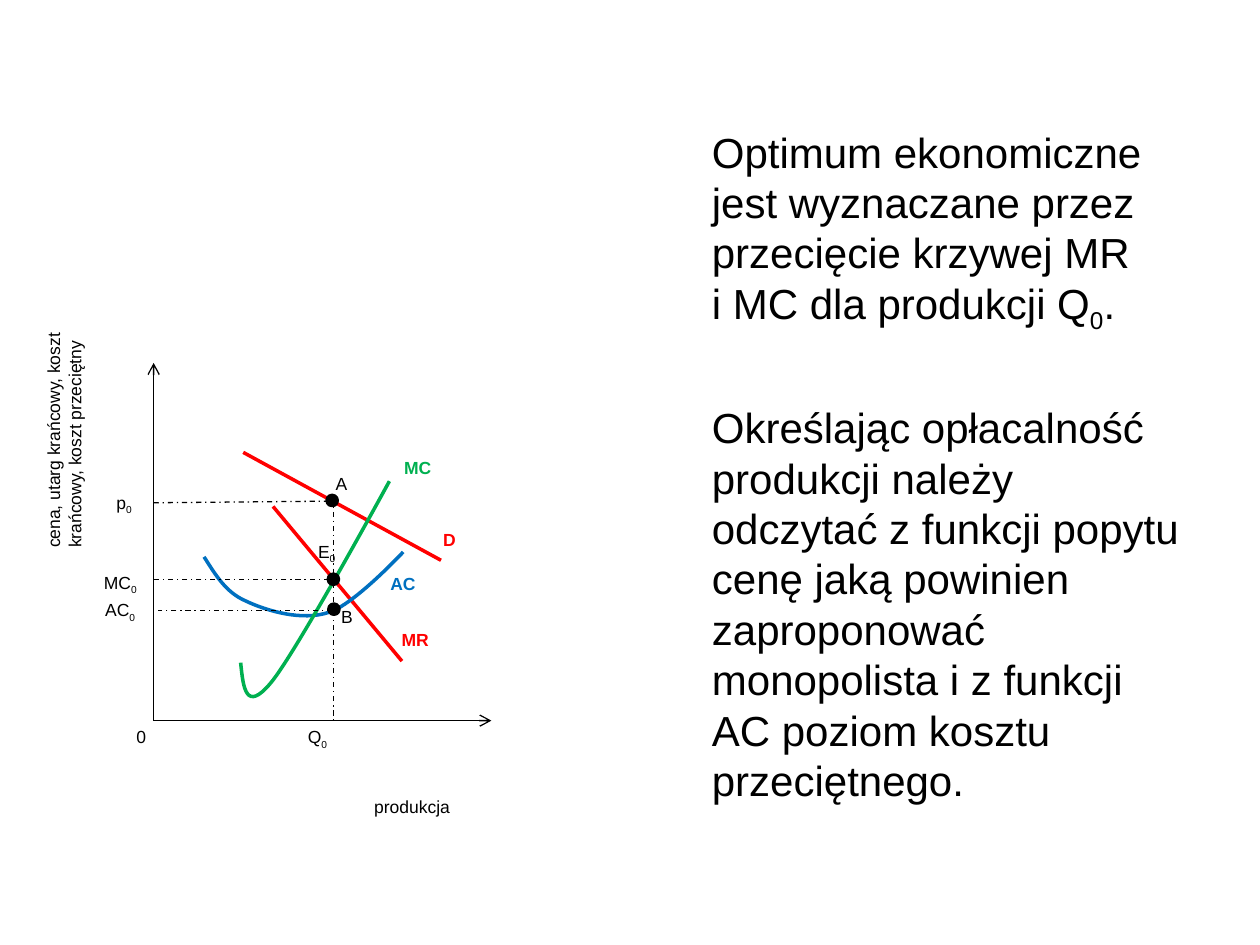
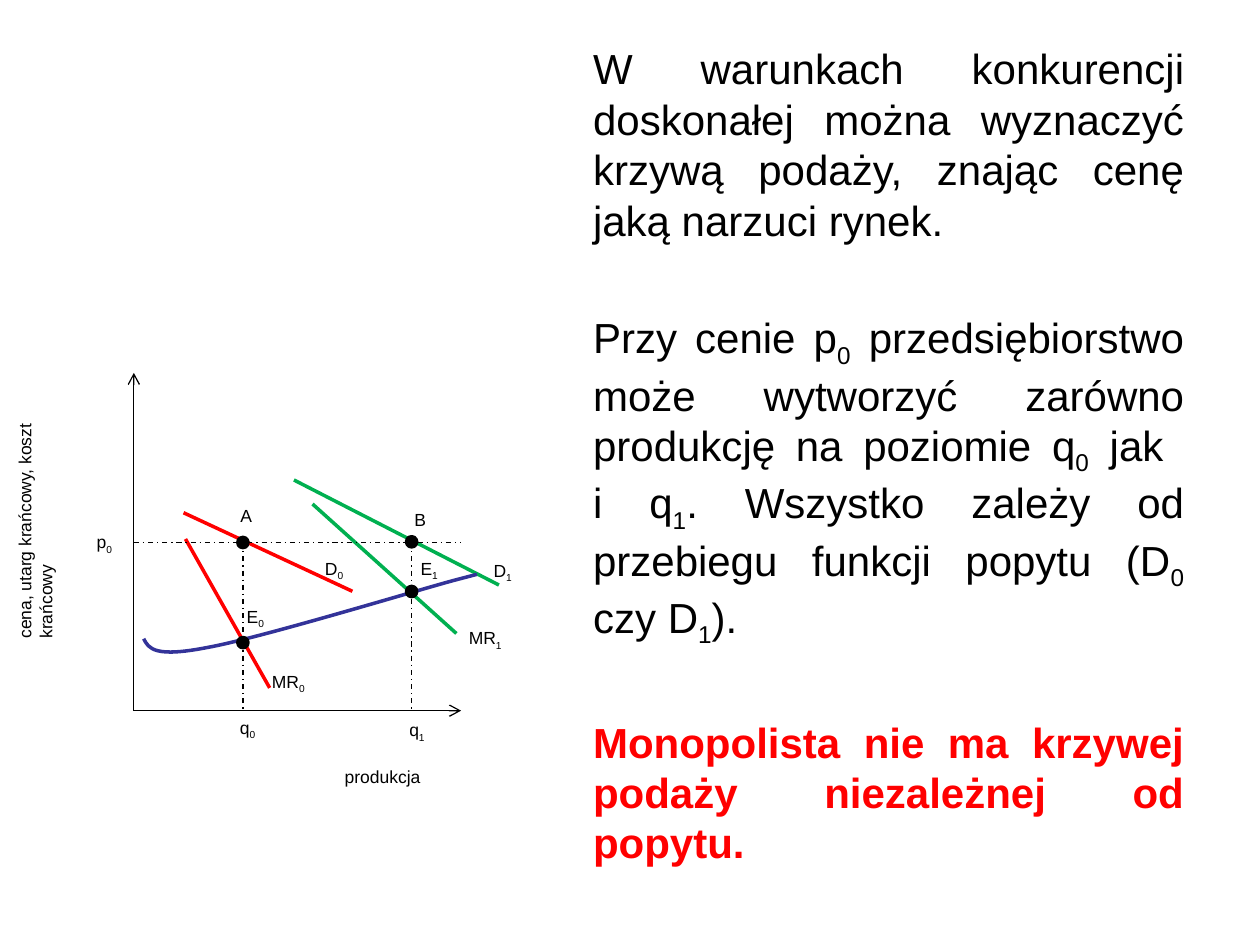
from dataclasses import dataclass

from lxml.etree import SubElement
from pptx import Presentation
from pptx.dml.color import RGBColor as Rgb
from pptx.enum.dml import MSO_LINE as Dash
from pptx.enum.shapes import MSO_CONNECTOR as Link, MSO_SHAPE as Form
from pptx.enum.text import MSO_ANCHOR as Anchor, MSO_AUTO_SIZE as Fit, PP_ALIGN as Align
from pptx.oxml.ns import qn
from pptx.util import Pt


@dataclass(frozen=True)
class Theme:
    font: str = "Arial"
    black: str = "000000"
    red: str = "FF0000"
    green: str = "00B050"
    blue: str = "0070C0"
    navy: str = "333399"
    body: float = 24
    label: float = 10
    thin: float = 0.75
    thick: float = 2
    dot: float = 5.8
    high: float = 19.4
    gap: float = 38.4


THEME = Theme()


def write(para, text, size, color=THEME.black, bold=False):
    def add(part, sub=False):
        run = para.add_run()
        run.text = part
        font = run.font
        font.name, font.size, font.bold = THEME.font, Pt(size), bold
        font.color.rgb = Rgb.from_string(color)
        if sub:
            font._element.set("baseline", "-25000")

    for row, line in enumerate(text.split("\n")):
        if row:
            para.add_line_break()
        first, *rest = line.split("_")
        add(first)
        for part in rest:
            add(part[0], sub=True)
            if part[1:]:
                add(part[1:])
    for mark in para._p.findall(qn("a:br")):
        SubElement(mark, qn("a:rPr"), sz=str(size * 100))


def add_page(deck, box, texts, align):
    slide = deck.slides.add_slide(deck.slide_layouts[1])
    title = slide.shapes.title._element
    title.getparent().remove(title)
    body = slide.placeholders[1]
    body.left, body.top, body.width, body.height = map(Pt, box)
    frame = body.text_frame
    frame.auto_size, frame.word_wrap = Fit.NONE, True
    frame.vertical_anchor = Anchor.TOP
    for num, (text, color, bold) in enumerate(texts):
        para = frame.add_paragraph() if num else frame.paragraphs[0]
        props = para._p.get_or_add_pPr()
        props.set("marL", "0")
        props.set("indent", "0")
        SubElement(props, qn("a:buNone"))
        para.alignment = align
        para.space_before = Pt(THEME.gap if num else 0)
        write(para, text, THEME.body, color, bold)
    return slide


def add_label(slide, text, left, top, width, color=THEME.black, bold=False,
              high=THEME.high, turn=0):
    box = slide.shapes.add_textbox(*map(Pt, (left, top, width, high)))
    box.rotation = turn
    frame = box.text_frame
    frame.word_wrap = True
    write(frame.paragraphs[0], text, THEME.label, color, bold)


def add_line(slide, start, end, color=THEME.black, width=THEME.thin,
             dash=False, arrow=False):
    line = slide.shapes.add_connector(Link.STRAIGHT, *map(Pt, (*start, *end)))
    line.line.color.rgb = Rgb.from_string(color)
    line.line.width = Pt(width)
    if dash:
        line.line.dash_style = Dash.DASH_DOT
    if arrow:
        SubElement(line.line._get_or_add_ln(), qn("a:tailEnd"), type="arrow")
    SubElement(line._element.spPr, qn("a:effectLst"))


def add_curve(slide, points, color):
    start, *rest = [(Pt(x), Pt(y)) for x, y in points]
    pen = slide.shapes.build_freeform(*start)
    pen.add_line_segments(rest, close=False)
    curve = pen.convert_to_shape()
    legs = list(curve._element.iter(qn("a:lnTo")))
    for num in range(0, len(legs), 3):
        trio = legs[num:num + 3]
        route = trio[0].getparent()
        bend = SubElement(route, qn("a:cubicBezTo"))
        for leg in trio:
            bend.append(leg[0])
            route.remove(leg)
    curve.shadow.inherit = False
    curve.fill.background()
    curve.line.color.rgb = Rgb.from_string(color)
    curve.line.width = Pt(THEME.thick)


def add_dot(slide, x, y):
    size = THEME.dot
    dot = slide.shapes.add_shape(
        Form.OVAL, *map(Pt, (x - size / 2, y - size / 2, size, size)))
    dot.shadow.inherit = False
    dot.fill.solid()
    dot.fill.fore_color.rgb = Rgb.from_string(THEME.black)
    dot.line.color.rgb = Rgb.from_string(THEME.black)
    dot.line.width = Pt(THEME.thick)


def add_graph(slide, zero, top, right, lines, curves, guides, dots, labels):
    x, y = zero
    add_line(slide, zero, (x, top), arrow=True)
    add_line(slide, zero, (right, y), arrow=True)
    for start, end, color in lines:
        add_line(slide, start, end, color, THEME.thick)
    for points, color in curves:
        add_curve(slide, points, color)
    for start, end in guides:
        add_line(slide, start, end, dash=True)
    for spot in dots:
        add_dot(slide, *spot)
    for label in labels:
        add_label(slide, *label)


def add_best(deck):
    t = THEME
    slide = add_page(deck, (399.6, 68.4, 284.4, 402.5), [
        ("Optimum ekonomiczne jest wyznaczane przez przecięcie krzywej MR \n"
         "i MC dla produkcji Q_0.", t.black, False),
        ("Określając opłacalność produkcji należy odczytać z funkcji popytu "
         "cenę jaką powinien zaproponować monopolista i z funkcji AC poziom "
         "kosztu przeciętnego.", t.black, False),
    ], Align.LEFT)
    x, y = zero = 87.8, 411.8
    mid = 190.5
    add_graph(
        slide, zero, 207.4, 280.8,
        lines=[((139, 258.5), (252, 320.2), t.red),
               ((156, 289.4), (229.7, 377.8), t.red)],
        curves=[
            ([(116.6, 318.2), (123.1, 328.3), (128.9, 338.4), (140.4, 343.4),
              (152.6, 349.2), (172.8, 355), (187.9, 349.9),
              (202.3, 345.6), (230.4, 315.4), (230.4, 315.4)], t.blue),
            ([(137.5, 378.7), (139, 393.1), (140.4, 407.5), (154.8, 390.2),
              (169.2, 373), (222.5, 275), (222.5, 275)], t.green)],
        guides=[((mid, 284.4), (mid, y)), ((188, 286.4), (x, 287.3)),
                ((188, 331.2), (x, 331.2)), ((190, 348.8), (90, 348.8))],
        dots=[(189.8, 286), (mid, 331), (190.8, 348.1)],
        labels=[("produkcja", 206.8, 451.4, 90.7),
                ("D", 246.2, 298.5, 28, t.red, True),
                ("MR", 222.5, 355.7, 44, t.red, True),
                ("AC", 216, 324, 44, t.blue, True),
                ("MC", 223.9, 257.8, 36, t.green, True),
                ("A", 184.8, 266.8, 17.3),
                ("E_0", 174.7, 305.6, 26),
                ("B", 187.9, 342.7, 17.3),
                ("Q_0", 168.9, 411.5, 31),
                ("0", 70.8, 411.5, 17.3),
                ("p_0", 59.5, 277.5, 28),
                ("MC_0", 52.3, 323.3, 35.3),
                ("AC_0", 53, 338.9, 35.3)])
    add_label(slide, "cena, utarg krańcowy, koszt krańcowy, koszt przeciętny",
              -36.7, 230.8, 146.9, high=31.7, turn=270)


def add_supply(deck):
    t = THEME
    slide = add_page(deck, (331.7, 20.9, 352.1, 493.2), [
        ("W warunkach konkurencji doskonałej można wyznaczyć krzywą podaży, "
         "znając cenę jaką narzuci rynek.", t.black, False),
        ("Przy cenie p_0 przedsiębiorstwo może wytworzyć zarówno produkcję "
         "na poziomie q_0 jak \ni q_1. Wszystko zależy od przebiegu funkcji "
         "popytu (D_0 czy D_1).", t.black, False),
        ("Monopolista nie ma krzywej podaży niezależnej od popytu.",
         t.red, True),
    ], Align.JUSTIFY)
    x, y = zero = 76.5, 406.1
    right, price, near, far = 263.5, 309.8, 138.8, 235.2
    add_graph(
        slide, zero, 213.1, right,
        lines=[((104.9, 293), (201.4, 337.9), t.red),
               ((106, 308), (154.1, 393.1), t.red),
               ((168, 274.3), (285.1, 334.3), t.green),
               ((178.6, 288), (260.8, 362), t.green)],
        curves=[
            ([(82.1, 365), (85, 370.8), (88.6, 375.8), (118.1, 370.1),
              (146.9, 365), (234.7, 338.4), (258.5, 331.9),
              (263, 330.7), (268, 329.4), (272.5, 328.2)], t.navy)],
        guides=[((x, price), (right, price)),
                ((near, price), (near, y)), ((far, price), (far, y))],
        dots=[(near, 310), (far, 309.6), (near, 367.2), (far, 338)],
        labels=[("produkcja", 189.9, 434.2, 73.4),
                ("p_0", 48.2, 300.2, 28),
                ("D_0", 178.6, 315.4, 28),
                ("D_1", 275, 316.4, 28),
                ("MR_0", 148.3, 379.7, 39.6),
                ("MR_1", 260.8, 355, 39.6),
                ("q_0", 130, y, 33.8),
                ("q_1", 226.8, 407.5, 33.8),
                ("A", 130.3, 285.1, 31),
                ("B", 229.7, 287.3, 31),
                ("E_0", 133.9, 342.7, 33.8),
                ("E_1", 233.3, 315.4, 33.8)])
    add_label(slide, "cena, utarg krańcowy, koszt krańcowy",
              -59, 276.9, 158.4, high=31.7, turn=270)


def main():
    deck = Presentation()
    deck.slide_width, deck.slide_height = Pt(720), Pt(540)
    add_best(deck)
    add_supply(deck)
    deck.save("out.pptx")


if __name__ == "__main__":
    main()
